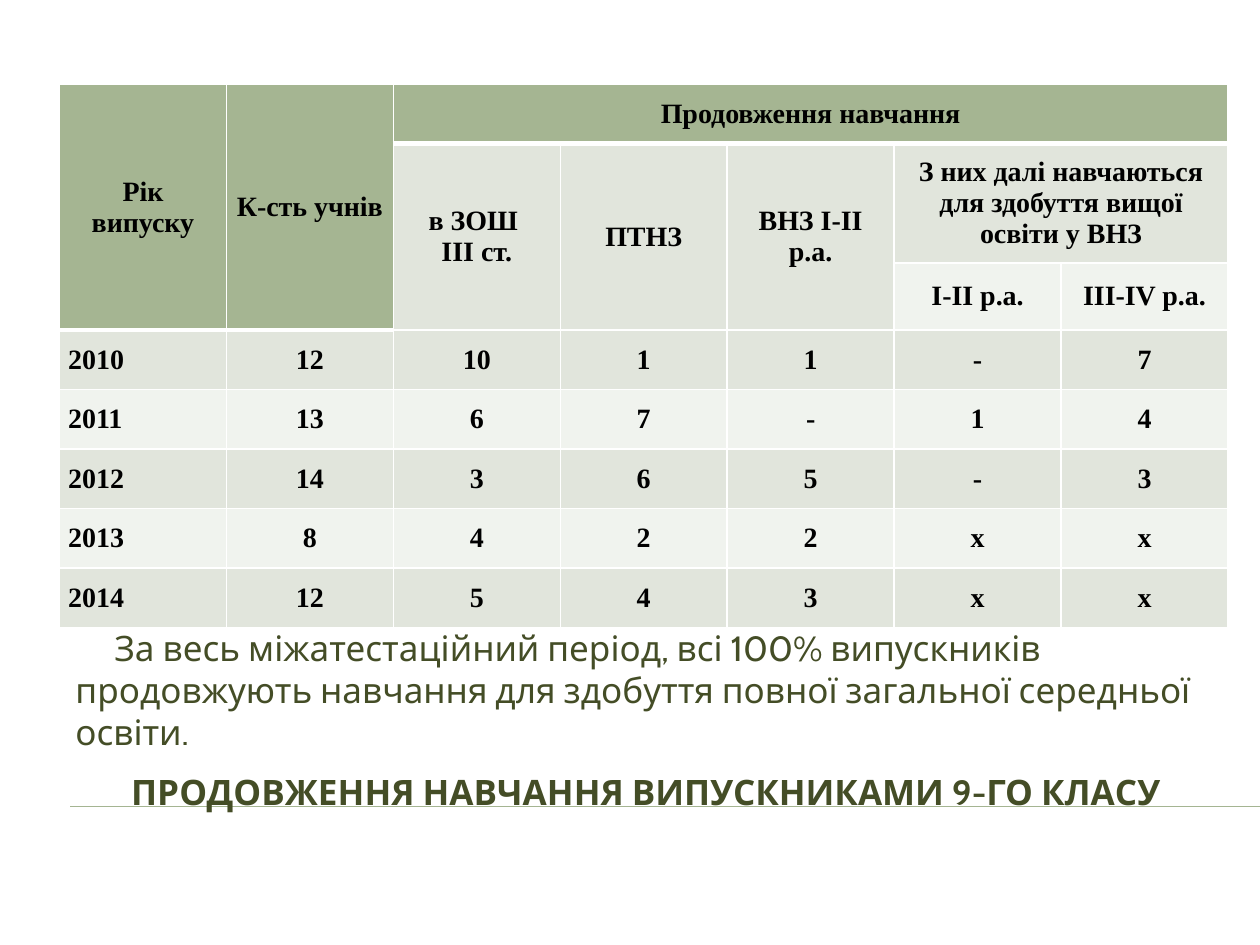
from dataclasses import dataclass

from lxml.etree import SubElement
from pptx import Presentation
from pptx.dml.color import RGBColor
from pptx.enum.shapes import MSO_CONNECTOR as Connector
from pptx.enum.text import MSO_ANCHOR as Anchor, MSO_AUTO_SIZE as AutoSize, PP_ALIGN as Align
from pptx.oxml import parse_xml
from pptx.oxml.ns import nsdecls, qn
from pptx.util import Pt

GREEN, PALE, PALER = "A5B592", "E1E5DC", "F0F3EE"
WHITE, BLACK, OLIVE = "FFFFFF", "000000", "444D26"
COLUMNS, COLUMN_WIDTH = 7, 95.4
ROW_HEIGHTS = [34, 68] + [34] * 6
FIRST_YEAR_ROW = 3


@dataclass
class Heading:
    text: str
    row: int
    column: int
    rows: int = 1
    columns: int = 1


HEADINGS = [
    Heading("Рік випуску", 0, 0, rows=3),
    Heading("К-сть учнів", 0, 1, rows=3),
    Heading("Продовження навчання", 0, 2, columns=5),
    Heading("в ЗОШ \nІІІ ст.", 1, 2, rows=2),
    Heading("ПТНЗ", 1, 3, rows=2),
    Heading("ВНЗ І-ІІ р.а.", 1, 4, rows=2),
    Heading("З них далі навчаються для здобуття вищої освіти у ВНЗ", 1, 5, columns=2),
    Heading("І-ІІ р.а.", 2, 5),
    Heading("ІІІ-IV р.а.", 2, 6),
]
YEARS = [
    ("2010", "12", "10", "1", "1", "-", "7"),
    ("2011", "13", "6", "7", "-", "1", "4"),
    ("2012", "14", "3", "6", "5", "-", "3"),
    ("2013", "8", "4", "2", "2", "х", "х"),
    ("2014", "12", "5", "4", "3", "х", "х"),
]


def color(value: str) -> RGBColor:
    return RGBColor.from_string(value)


def apply(target, values: dict) -> None:
    for name, value in values.items():
        setattr(target, name, value)


def write(frame, text: str, align, size: float, font: str, ink: str, bold: bool) -> None:
    frame.text = text
    for para in frame.paragraphs:
        para.alignment = align
        for span in para.runs:
            apply(span.font, {"size": Pt(size), "name": font, "bold": bold})
            span.font.color.rgb = color(ink)


def is_header(row: int, column: int) -> bool:
    return row == 0 or (row < FIRST_YEAR_ROW and column < 2)


def ends_header(row: int, column: int) -> bool:
    return row == 0 or (row == FIRST_YEAR_ROW - 1 and column < 2)


def style_cell(cell, row: int, column: int) -> None:
    """Fill the cell and draw its white borders, thick under the header."""
    cell.fill.solid()
    band = PALE if row % 2 else PALER
    cell.fill.fore_color.rgb = color(GREEN if is_header(row, column) else band)
    apply(cell, {"vertical_anchor": Anchor.MIDDLE, "margin_left": Pt(5),
                 "margin_right": Pt(5), "margin_top": 0, "margin_bottom": 0})
    widths = {
        "L": 1, "R": 1,
        "T": 3 if row and ends_header(row - 1, column) else 1,
        "B": 3 if ends_header(row, column) else 1,
    }
    properties = cell._tc.get_or_add_tcPr()
    for index, (side, width) in enumerate(widths.items()):
        border = parse_xml(
            f'<a:ln{side} {nsdecls("a")} w="{Pt(width)}"><a:solidFill>'
            f'<a:srgbClr val="{WHITE}"/></a:solidFill></a:ln{side}>')
        properties.insert(index, border)


def write_cell(cell, text: str, align=Align.CENTER) -> None:
    write(cell.text_frame, text, align, 16, "Times New Roman", BLACK, True)


def add_graduates_table(page) -> None:
    frame = page.shapes.add_table(
        len(ROW_HEIGHTS), COLUMNS, Pt(34), Pt(48.2),
        Pt(COLUMNS * COLUMN_WIDTH), Pt(sum(ROW_HEIGHTS)))
    table = frame.table
    for column in table.columns:
        column.width = Pt(COLUMN_WIDTH)
    for row, height in enumerate(ROW_HEIGHTS):
        table.rows[row].height = Pt(height)
        for column in range(COLUMNS):
            style_cell(table.cell(row, column), row, column)

    for item in HEADINGS:
        cell = table.cell(item.row, item.column)
        if item.rows * item.columns > 1:
            cell.merge(table.cell(item.row + item.rows - 1, item.column + item.columns - 1))
        write_cell(cell, item.text)
    for row, values in enumerate(YEARS, FIRST_YEAR_ROW):
        for column, value in enumerate(values):
            write_cell(table.cell(row, column), value, Align.CENTER if column else Align.JUSTIFY)


def add_title(page):
    title = page.shapes.title
    apply(title, {"left": Pt(36), "top": Pt(432), "width": Pt(666), "height": Pt(41)})
    apply(title.text_frame, {"word_wrap": True, "auto_size": AutoSize.NONE,
                             "vertical_anchor": Anchor.MIDDLE})
    write(title.text_frame, "ПРОДОВЖЕННЯ НАВЧАННЯ ВИПУСКНИКАМИ 9-ГО КЛАСУ",
          Align.CENTER, 20, "Cabin", OLIVE, True)
    return title


def add_rule(page, title) -> None:
    rule = page.shapes.add_connector(Connector.STRAIGHT, Pt(40.3), Pt(460.8), Pt(720), Pt(460.8))
    rule.line.color.rgb = color(GREEN)
    rule.line.width = Pt(0.75)
    SubElement(rule.element.spPr, qn("a:effectLst"))
    title.element.addprevious(rule.element)  # keep the rule behind the title


def add_summary(page) -> None:
    box = page.shapes.add_textbox(Pt(36), Pt(354.2), Pt(661.7), Pt(71.3))
    box.text_frame.word_wrap = True
    write(box.text_frame,
          "За весь міжатестаційний період, всі 100% випускників продовжують навчання "
          "для здобуття повної загальної середньої освіти.",
          Align.LEFT, 20, "Cabin", OLIVE, False)
    para = box.text_frame.paragraphs[0]
    para.space_before = Pt(4)
    para._p.get_or_add_pPr().set("indent", str(Pt(22.3)))


def main() -> None:
    deck = Presentation()
    apply(deck, {"slide_width": Pt(720), "slide_height": Pt(540)})
    page = deck.slides.add_slide(deck.slide_layouts[5])
    title = add_title(page)
    add_rule(page, title)
    add_summary(page)
    add_graduates_table(page)
    deck.save("out.pptx")


if __name__ == "__main__":
    main()
